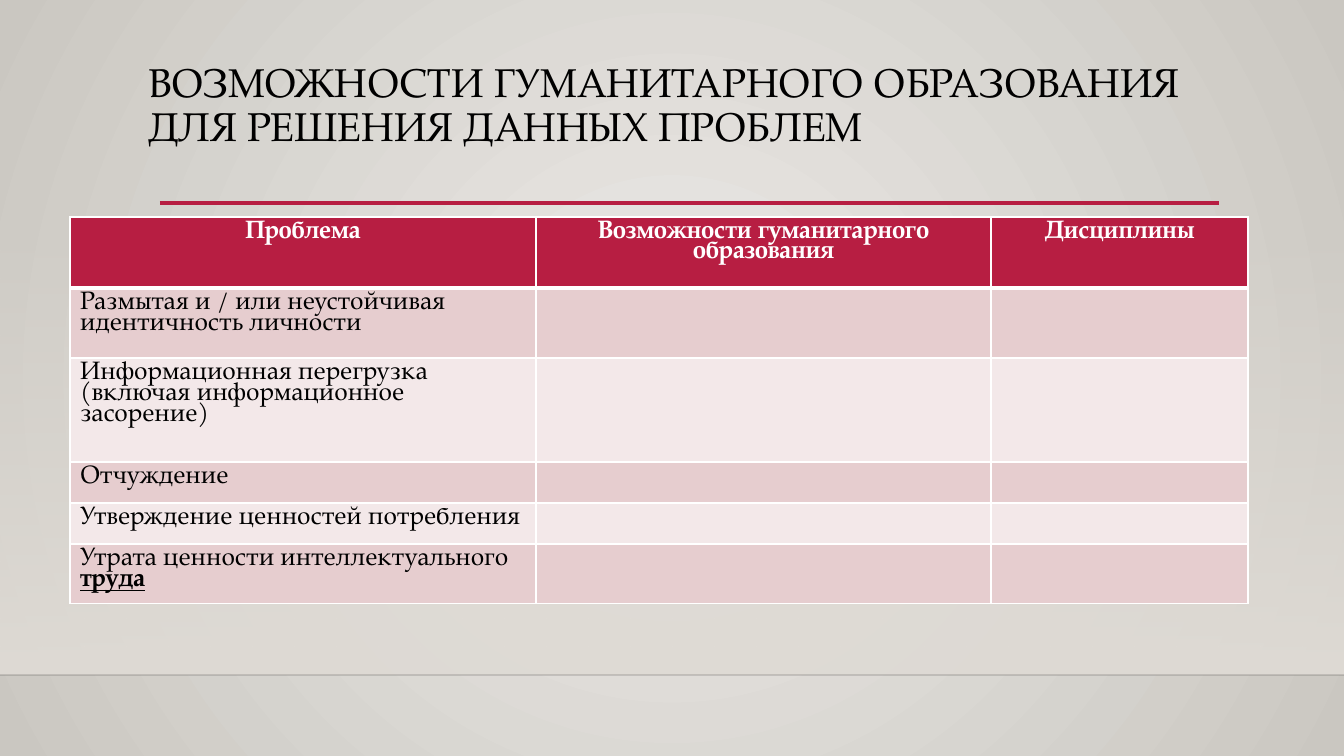
"""Builds a slide on what humanities education can offer for five problems."""
from dataclasses import dataclass

from lxml import etree
from pptx import Presentation
from pptx.dml.color import RGBColor
from pptx.dml.fill import FillFormat
from pptx.enum.shapes import MSO_CONNECTOR, MSO_SHAPE
from pptx.enum.text import MSO_ANCHOR, MSO_AUTO_SIZE, PP_ALIGN
from pptx.oxml.ns import qn
from pptx.slide import Slide
from pptx.table import _Cell
from pptx.text.text import _Paragraph
from pptx.util import Emu, Pt

STRAIGHT = MSO_CONNECTOR.STRAIGHT
RECTANGLE = MSO_SHAPE.RECTANGLE
TOP = MSO_ANCHOR.TOP
NO_FIT = MSO_AUTO_SIZE.NONE
LEFT = PP_ALIGN.LEFT
CENTER = PP_ALIGN.CENTER

FONT = "TeX Gyre Pagella"
BLACK = RGBColor(0x00, 0x00, 0x00)
WHITE = RGBColor(0xFF, 0xFF, 0xFF)
CRIMSON = RGBColor(0xB7, 0x1E, 0x42)
ROSE = RGBColor(0xE6, 0xCD, 0xCF)
PALE_ROSE = RGBColor(0xF3, 0xE8, 0xE9)
CENTER_GREY = RGBColor(0xEC, 0xEA, 0xE7)
EDGE_GREY = RGBColor(0xCA, 0xC7, 0xC1)
WALL = RGBColor(0xDF, 0xDB, 0xD5)
FLOOR_LINE = RGBColor(0x00, 0x00, 0x01)

PX_PER_INCH = 100.8
PAGE_WIDTH, PAGE_HEIGHT = 1344, 756
FLOOR_Y = 675
TABLE_LEFT, TABLE_TOP = 70, 217
COLUMN_WIDTHS = (466, 455, 257)
ROW_HEIGHTS = (71, 70, 104, 41, 41, 60)

TITLE = "ВОЗМОЖНОСТИ ГУМАНИТАРНОГО ОБРАЗОВАНИЯ ДЛЯ РЕШЕНИЯ ДАННЫХ ПРОБЛЕМ"
HEADINGS = ("Проблема", "Возможности гуманитарного образования", "Дисциплины")


@dataclass(frozen=True)
class Problem:
    """A problem, with an optional emphasised ending."""
    text: str
    emphasis: str = ""


@dataclass(frozen=True)
class Rule:
    """A horizontal line across part of the slide."""
    left: int
    right: int
    y: int
    color: RGBColor
    points: float
    opacity: int = 100


PROBLEMS = (
    Problem("Размытая и / или неустойчивая идентичность личности"),
    Problem("Информационная перегрузка (включая информационное засорение)"),
    Problem("Отчуждение"),
    Problem("Утверждение ценностей потребления"),
    Problem("Утрата ценности интеллектуального ", "труда"),
)
RULES = (
    Rule(0, PAGE_WIDTH, FLOOR_Y, FLOOR_LINE, 1, 20),
    Rule(160, 1219, 203, CRIMSON, 2.5),
)


def px(length: int) -> Emu:
    """Turn pixels into EMU."""
    return Emu(round(length * 914400 / PX_PER_INCH))


def set_opacity(color: etree._Element, percent: int) -> None:
    """Give a colour element an opacity."""
    etree.SubElement(color, qn("a:alpha"), val=str(percent * 1000))


def set_gradient(fill: FillFormat, first: RGBColor, last: RGBColor) -> None:
    """Fill with a two-colour gradient running downwards."""
    fill.gradient()
    fill.gradient_angle = 270
    for stop, color, position in zip(fill.gradient_stops, (first, last), (0, 1)):
        stop.color.rgb = color
        stop.position = position


def paint_background(page: Slide) -> None:
    """Paint the page with a gradient spreading from its centre."""
    set_gradient(page.background.fill, CENTER_GREY, EDGE_GREY)
    linear = next(page.element.iter(qn("a:lin")))
    circle = etree.Element(qn("a:path"), path="circle")
    etree.SubElement(circle, qn("a:fillToRect"), dict.fromkeys("ltrb", "50000"))
    linear.getparent().replace(linear, circle)


def add_wall(page: Slide) -> None:
    """Add the band that fades in towards the floor line."""
    top = 223
    wall = page.shapes.add_shape(
        RECTANGLE, 0, px(top), px(PAGE_WIDTH), px(FLOOR_Y - top))
    wall.shadow.inherit = False
    wall.line.fill.background()
    set_gradient(wall.fill, WALL, WALL)
    gradient = wall.element.spPr.find(qn("a:gradFill"))
    set_opacity(next(gradient.iter(qn("a:srgbClr"))), 0)


def add_rule(page: Slide, rule: Rule) -> None:
    """Add one horizontal line."""
    line = page.shapes.add_connector(
        STRAIGHT, px(rule.left), px(rule.y), px(rule.right), px(rule.y))
    line.line.color.rgb = rule.color
    line.line.width = Pt(rule.points)
    properties = line.element.spPr
    if rule.opacity < 100:
        set_opacity(next(properties.iter(qn("a:srgbClr"))), rule.opacity)
    etree.SubElement(properties, qn("a:effectLst"))


def format_paragraph(para: _Paragraph, size: float, color: RGBColor,
                     align: PP_ALIGN, spacing: float, bold: bool = False) -> None:
    """Set the font and layout of a paragraph."""
    para.alignment = align
    para.line_spacing = spacing
    para.font.name = FONT
    para.font.size = Pt(size)
    para.font.color.rgb = color
    para.font.bold = bold


def write_title(page: Slide) -> None:
    """Place and write the slide title."""
    title = page.shapes.title
    title.left, title.top, title.width, title.height = map(px, (138, 58, 1081, 146))
    frame = title.text_frame
    frame.text = TITLE
    frame.word_wrap = True
    frame.auto_size = NO_FIT
    frame.vertical_anchor = TOP
    format_paragraph(frame.paragraphs[0], 28.8, BLACK, LEFT, 0.9)


def style_cell(cell: _Cell, fill: RGBColor, top: float, bottom: float) -> None:
    """Fill a cell and give it white borders."""
    cell.fill.solid()
    cell.fill.fore_color.rgb = fill
    properties = cell._tc.get_or_add_tcPr()
    for index, (side, points) in enumerate(zip("LRTB", (1, 1, top, bottom))):
        border = etree.Element(qn(f"a:ln{side}"), w=str(Pt(points)))
        solid = etree.SubElement(border, qn("a:solidFill"))
        etree.SubElement(solid, qn("a:srgbClr"), val=str(WHITE))
        properties.insert(index, border)


def add_problem_table(page: Slide) -> None:
    """Add the table of problems with its two empty answer columns."""
    table = page.shapes.add_table(
        len(ROW_HEIGHTS), len(COLUMN_WIDTHS), px(TABLE_LEFT), px(TABLE_TOP),
        px(sum(COLUMN_WIDTHS)), px(sum(ROW_HEIGHTS))).table
    table.horz_banding = False
    for column, width in zip(table.columns, COLUMN_WIDTHS):
        column.width = px(width)
    for index, (row, height) in enumerate(zip(table.rows, ROW_HEIGHTS)):
        row.height = px(height)
        header = index == 0
        fill = CRIMSON if header else ROSE if index % 2 else PALE_ROSE
        for cell in row.cells:
            style_cell(cell, fill, 3 if index == 1 else 1, 3 if header else 1)
    for column, heading in enumerate(HEADINGS):
        para = table.cell(0, column).text_frame.paragraphs[0]
        para.add_run().text = heading
        format_paragraph(para, 18, WHITE, CENTER, 0.83, bold=True)
    for index, problem in enumerate(PROBLEMS, start=1):
        para = table.cell(index, 0).text_frame.paragraphs[0]
        para.add_run().text = problem.text
        format_paragraph(para, 18, BLACK, LEFT, 0.83)
        if problem.emphasis:
            span = para.add_run()
            span.text = problem.emphasis
            span.font.bold = True
            span.font.underline = True


def main() -> None:
    """Build and save the deck."""
    deck = Presentation()
    deck.slide_width, deck.slide_height = px(PAGE_WIDTH), px(PAGE_HEIGHT)
    page = deck.slides.add_slide(deck.slide_layouts.get_by_name("Title Only"))
    paint_background(page)
    add_wall(page)
    for rule in RULES:
        add_rule(page, rule)
    write_title(page)
    add_problem_table(page)
    deck.save("out.pptx")


if __name__ == "__main__":
    main()
